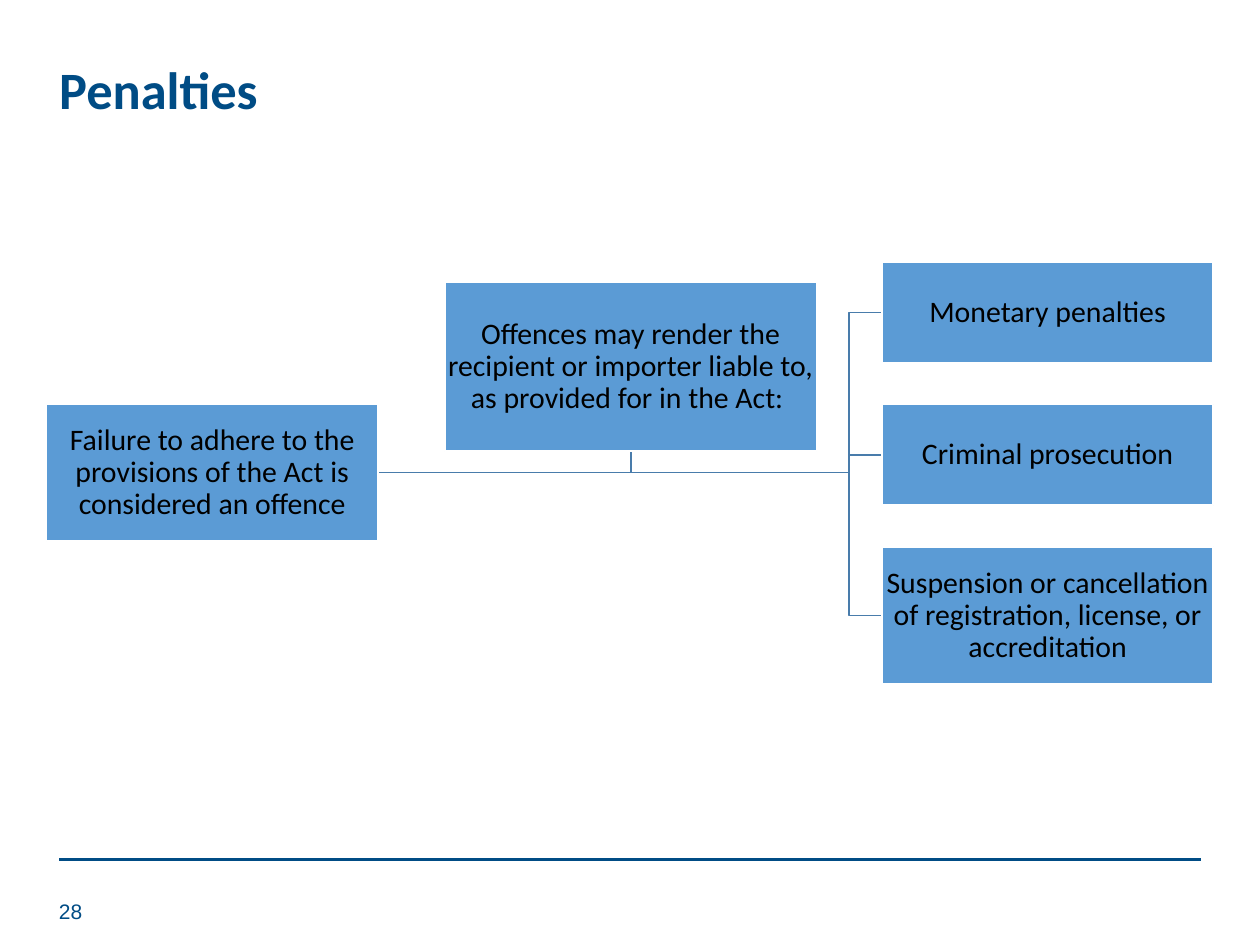
from pptx import Presentation
from pptx.dml.color import RGBColor
from pptx.enum.shapes import MSO_CONNECTOR, MSO_SHAPE
from pptx.enum.text import MSO_ANCHOR, PP_ALIGN
from pptx.oxml.ns import qn
from pptx.util import Inches, Pt
from lxml import etree

STRAIGHT = MSO_CONNECTOR.STRAIGHT
RECTANGLE = MSO_SHAPE.RECTANGLE
TOP, MIDDLE = MSO_ANCHOR.TOP, MSO_ANCHOR.MIDDLE
LEFT, CENTER = PP_ALIGN.LEFT, PP_ALIGN.CENTER
TITLE_ONLY = 5
COLORS = {"navy": "004C85", "box": "5B9BD5", "branch": "497CAB", "white": "FFFFFF", "black": "000000"}


def color(name):
    return RGBColor.from_string(COLORS[name])


class PenaltiesSlide:
    """Holds the style and the current slide, and draws each kind of element."""

    heading_font = "Calibri"
    number_font = "Arial"
    box_inset = Inches(0.01)

    def __init__(self, presentation):
        self.slide = presentation.slides.add_slide(presentation.slide_layouts[TITLE_ONLY])
        self.shapes = self.slide.shapes

    def set_text(self, shape, text, size, font, color_name, anchor=MIDDLE, align=LEFT, spacing=1.0, bold=False):
        frame = shape.text_frame
        frame.word_wrap = True
        frame.vertical_anchor = anchor
        frame.text = text
        paragraph = frame.paragraphs[0]
        paragraph.alignment = align
        paragraph.line_spacing = spacing
        paragraph.font.size = Pt(size)
        paragraph.font.name = font
        paragraph.font.bold = bold
        paragraph.font.color.rgb = color(color_name)

    def title(self, text, left, top, width, height):
        title = self.shapes.title
        title.left, title.top = Inches(left), Inches(top)
        title.width, title.height = Inches(width), Inches(height)
        self.set_text(title, text, 30, self.heading_font, "navy", anchor=TOP, spacing=0.9, bold=True)

    def rule(self, left, right, y):
        line = self.shapes.add_connector(STRAIGHT, Inches(left), Inches(y), Inches(right), Inches(y))
        line.line.color.rgb = color("navy")
        line.line.width = Pt(2)
        etree.SubElement(line._element.spPr, qn("a:effectLst"))

    def page_number(self, text, left, top, width, height):
        box = self.shapes.add_textbox(Inches(left), Inches(top), Inches(width), Inches(height))
        self.set_text(box, text, 12, self.number_font, "navy")

    def branch(self, *points):
        start, *rest = [(Inches(x), Inches(y)) for x, y in points]
        builder = self.shapes.build_freeform(*start)
        builder.add_line_segments(rest, close=False)
        shape = builder.convert_to_shape()
        shape.shadow.inherit = False
        shape.fill.background()
        shape.line.color.rgb = color("branch")
        shape.line.width = Pt(1)

    def box(self, text, left, top, width, height):
        shape = self.shapes.add_shape(RECTANGLE, Inches(left), Inches(top), Inches(width), Inches(height))
        shape.shadow.inherit = False
        shape.fill.solid()
        shape.fill.fore_color.rgb = color("box")
        shape.line.color.rgb = color("white")
        shape.line.width = Pt(1)
        frame = shape.text_frame
        frame.margin_left = frame.margin_right = self.box_inset
        frame.margin_top = frame.margin_bottom = self.box_inset
        self.set_text(shape, text, 17, self.heading_font, "black", align=CENTER, spacing=0.9)


def main():
    presentation = Presentation()
    presentation.slide_width, presentation.slide_height = Inches(10), Inches(7.5)
    slide = PenaltiesSlide(presentation)

    slide.title("Penalties", 0.37, 0.46, 8.62, 0.58)
    slide.rule(0.47, 9.53, 6.82)
    slide.page_number("28", 0.37, 7.03, 0.46, 0.4)

    box_width, trunk_y, fork_x = 2.63, 3.75, 6.74
    offence_left, offence_height = 0.37, 1.09
    trunk_x = offence_left + box_width
    liability_left, liability_top, liability_width, liability_height = 3.53, 2.24, 2.95, 1.34
    liability_x = liability_left + liability_width / 2
    penalty_left, penalty_top, penalty_step = 7, 2.08, 1.13
    penalties = [
        ("Monetary penalties", 0.8),
        ("Criminal prosecution", 0.8),
        ("Suspension or cancellation of registration, license, or accreditation", 1.09),
    ]

    slide.branch((trunk_x, trunk_y), (liability_x, trunk_y), (liability_x, liability_top + liability_height))
    for index, (text, height) in enumerate(penalties):
        top = penalty_top + index * penalty_step
        middle = top + height / 2
        slide.branch((trunk_x, trunk_y), (fork_x, trunk_y), (fork_x, middle), (penalty_left, middle))
        slide.box(text, penalty_left, top, box_width, height)

    slide.box("Failure to adhere to the provisions of the Act is considered an offence",
              offence_left, trunk_y - offence_height / 2, box_width, offence_height)
    slide.box("Offences may render the recipient or importer liable to, as provided for in the Act: ",
              liability_left, liability_top, liability_width, liability_height)

    presentation.save("out.pptx")


if __name__ == "__main__":
    main()
